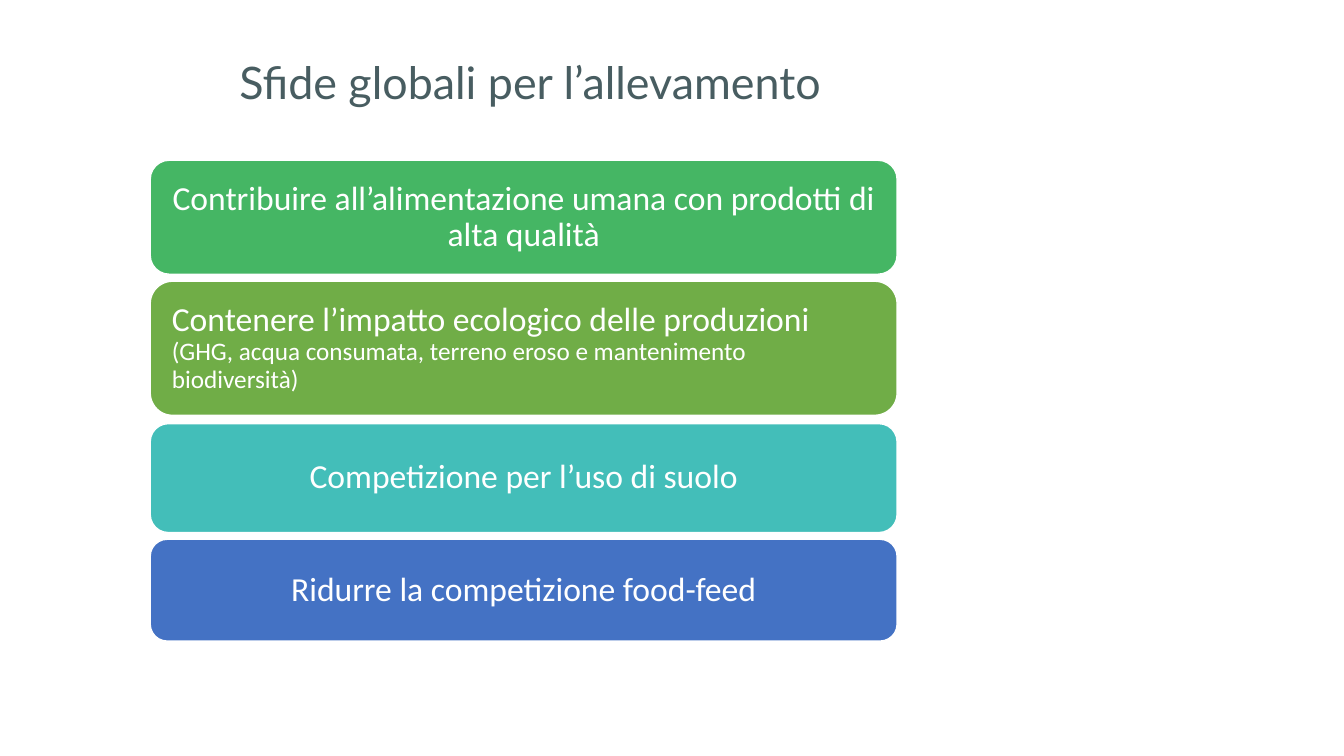
from pptx import Presentation
from pptx.dml.color import RGBColor
from pptx.enum.shapes import MSO_SHAPE
from pptx.enum.text import MSO_ANCHOR, MSO_AUTO_SIZE, PP_ALIGN
from pptx.util import Pt

ROUNDED = MSO_SHAPE.ROUNDED_RECTANGLE
BOTTOM, MIDDLE = MSO_ANCHOR.BOTTOM, MSO_ANCHOR.MIDDLE
LEFT, CENTER = PP_ALIGN.LEFT, PP_ALIGN.CENTER
NO_AUTOFIT = MSO_AUTO_SIZE.NONE
TITLE_ONLY = 5

COLORS = {
    "title": "485D61",
    "white": "FFFFFF",
    "green": "45B664",
    "olive": "70AD47",
    "teal": "43BEB9",
    "blue": "4472C4",
}
BAR_LEFT, BAR_WIDTH, BAR_INSET = 107.3, 533.5, 10.8

CHALLENGES = [
    (114.5, 81.4, "green", CENTER,
     [("Contribuire all’alimentazione umana con prodotti di alta qualità", 24)]),
    (200.9, 95.8, "olive", LEFT,
     [("Contenere l’impatto ecologico delle produzioni ", 24),
      ("(GHG, acqua consumata, terreno eroso e mantenimento biodiversità)", 18)]),
    (302.6, 77.8, "teal", CENTER, [("Competizione per l’uso di suolo", 24)]),
    (385.2, 72.7, "blue", CENTER, [("Ridurre la competizione food-feed", 24)]),
]


def color(name):
    return RGBColor.from_string(COLORS[name])


def format_font(font, name, size, color_name):
    font.name = name
    font.size = Pt(size)
    font.color.rgb = color(color_name)


def add_title(page, text):
    title = page.shapes.title
    title.left, title.top, title.width, title.height = Pt(45.4), Pt(10.8), Pt(666.7), Pt(70.6)
    frame = title.text_frame
    frame.text = text
    frame.auto_size = NO_AUTOFIT
    frame.vertical_anchor = BOTTOM
    para = frame.paragraphs[0]
    para.alignment = CENTER
    para.line_spacing = 0.9
    format_font(para.runs[0].font, "Lato", 32, "title")


def add_challenge(page, top, height, fill, alignment, spans):
    bar = page.shapes.add_shape(ROUNDED, Pt(BAR_LEFT), Pt(top), Pt(BAR_WIDTH), Pt(height))
    bar.shadow.inherit = False
    bar.fill.solid()
    bar.fill.fore_color.rgb = color(fill)
    bar.line.color.rgb = color("white")
    bar.line.width = Pt(1)
    frame = bar.text_frame
    frame.word_wrap = True
    frame.vertical_anchor = MIDDLE
    frame.margin_left = frame.margin_right = Pt(BAR_INSET)
    frame.margin_top = frame.margin_bottom = Pt(BAR_INSET)
    para = frame.paragraphs[0]
    para.alignment = alignment
    para.line_spacing = 0.9
    for text, size in spans:
        span = para.add_run()
        span.text = text
        format_font(span.font, "Calibri", size, "white")


def main():
    deck = Presentation()
    deck.slide_width, deck.slide_height = Pt(960), Pt(540)
    page = deck.slides.add_slide(deck.slide_layouts[TITLE_ONLY])
    add_title(page, "Sfide globali per l’allevamento")
    for challenge in CHALLENGES:
        add_challenge(page, *challenge)
    deck.save("out.pptx")


if __name__ == "__main__":
    main()
